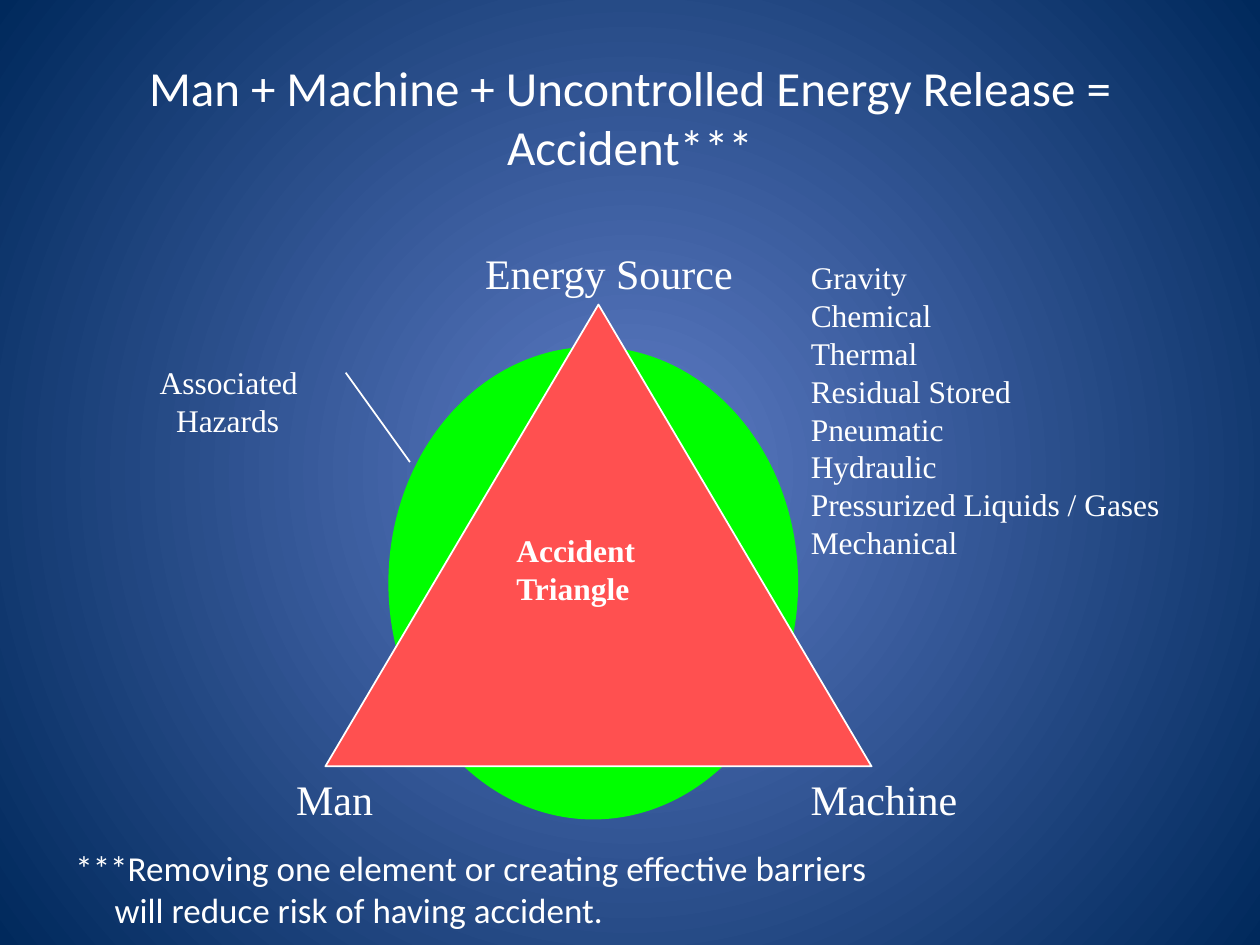
from lxml import etree
from pptx import Presentation
from pptx.dml.color import RGBColor
from pptx.enum.shapes import MSO_SHAPE
from pptx.enum.text import MSO_ANCHOR, MSO_AUTO_SIZE, PP_ALIGN
from pptx.oxml.ns import qn
from pptx.util import Cm, Pt

ELLIPSE = MSO_SHAPE.OVAL
TRIANGLE = MSO_SHAPE.ISOSCELES_TRIANGLE
CALLOUT = MSO_SHAPE.LINE_CALLOUT_1_NO_BORDER
LEFT, CENTER = PP_ALIGN.LEFT, PP_ALIGN.CENTER
TOP, MIDDLE = MSO_ANCHOR.TOP, MSO_ANCHOR.MIDDLE
NO_FIT, GROW = MSO_AUTO_SIZE.NONE, MSO_AUTO_SIZE.SHAPE_TO_FIT_TEXT

WHITE, GREEN, RED = "FFFFFF", "00FF00", "FF5050"
GLOW, NAVY = "5E7CC5", "00295C"
SERIF, SANS = "Times New Roman", "Calibri"
MACHINE_LEFT, CORNER_TOP = 16.09, 15.46
ENERGY_TYPES = [
    "Gravity", "Chemical", "Thermal", "Residual Stored", "Pneumatic",
    "Hydraulic", "Pressurized Liquids / Gases", "Mechanical",
]


def color(hex_text):
    return RGBColor.from_string(hex_text)


def place(shape, left, top, width, height):
    shape.left, shape.top = Cm(left), Cm(top)
    shape.width, shape.height = Cm(width), Cm(height)


def set_background(page, center, edge):
    """Fill the page with a circular gradient from center to edge."""
    fill = page.background.fill
    fill.gradient()
    for stop, position, shade in zip(fill.gradient_stops, (0, 1), (center, edge)):
        stop.position = position
        stop.color.rgb = color(shade)
    gradient = page.element.find(".//" + qn("a:gradFill"))
    gradient.remove(gradient.find(qn("a:lin")))
    circle = etree.SubElement(gradient, qn("a:path"), path="circle")
    etree.SubElement(circle, qn("a:fillToRect"), l="50000", t="50000", r="50000", b="50000")


def set_indent(para, margin, first):
    """Indent a paragraph without a bullet; first is relative to margin."""
    properties = para._p.get_or_add_pPr()
    properties.set("marL", str(Cm(margin)))
    properties.set("indent", str(Cm(first)))
    etree.SubElement(properties, qn("a:buNone"))


def write(shape, lines, size=18, font=SERIF, bold=False, align=LEFT, anchor=TOP,
          wrap=False, fit=GROW, indents=None):
    """Write one paragraph per line; indents holds (margin, first) pairs."""
    frame = shape.text_frame
    frame.text = "\n".join(lines)
    frame.word_wrap, frame.auto_size, frame.vertical_anchor = wrap, fit, anchor
    for para, indent in zip(frame.paragraphs, indents or [(0, 0)] * len(lines)):
        para.alignment = align
        para.space_before = Pt(0)
        set_indent(para, *indent)
        for span in para.runs:
            span.font.name, span.font.size, span.font.bold = font, Pt(size), bold
            span.font.color.rgb = color(WHITE)


def add_label(page, box, lines, **text_format):
    label = page.shapes.add_textbox(*map(Cm, box))
    write(label, lines, **text_format)


def add_figure(page, kind, box, fill=None, line=None):
    figure = page.shapes.add_shape(kind, *map(Cm, box))
    figure.shadow.inherit = False
    if fill:
        figure.fill.solid()
        figure.fill.fore_color.rgb = color(fill)
    else:
        figure.fill.background()
    if line:
        figure.line.color.rgb = color(line)
        figure.line.width = Pt(1)
    else:
        figure.line.fill.background()
    return figure


def add_callout(page, box, text, pointer):
    """Add a borderless callout; pointer is y, x of both line ends as shares of the box."""
    callout = add_figure(page, CALLOUT, box, line=WHITE)
    for index, share in enumerate(pointer):
        callout.adjustments[index] = share
    write(callout, [text], wrap=True, fit=NO_FIT, indents=[(0.33, -0.33)])


def main():
    deck = Presentation()
    deck.slide_width, deck.slide_height = Cm(25.4), Cm(19.05)
    page = deck.slides.add_slide(deck.slide_layouts[1])
    set_background(page, GLOW, NAVY)

    title, energy_list = page.placeholders
    place(title, 1.27, 0.76, 22.86, 3.18)
    write(title, ["Man + Machine + Uncontrolled Energy Release = Accident***"], size=28,
          font=SANS, align=CENTER, anchor=MIDDLE, wrap=True, fit=NO_FIT)
    place(energy_list, MACHINE_LEFT, 5.08, 7.77, 6.35)
    write(energy_list, ENERGY_TYPES)

    add_figure(page, ELLIPSE, (7.83, 6.99, 8.26, 9.53), fill=GREEN)
    add_figure(page, TRIANGLE, (6.56, 6.14, 11.01, 9.31), fill=RED, line=WHITE)
    add_label(page, (10.16, 10.59, 4.24, 2.62), ["Accident", "Triangle"], bold=True)

    for text, left, top, width in (
        ("Man", 5.72, CORNER_TOP, 2.1),
        ("Machine", MACHINE_LEFT, CORNER_TOP, 3.6),
        ("Energy Source", 9.53, 4.87, 5.55),
    ):
        add_label(page, (left, top, width, 1.27), [text], size=24)

    add_callout(page, (2.97, 7.19, 3.81, 1.7), "Associated Hazards",
                (0.19, 1.05, 1.25, 1.39))
    add_label(page, (0, 16.94, 22.86, 2.11),
              ["***Removing one element or creating effective barriers",
               "will reduce risk of having accident."],
              size=20, font=SANS, wrap=True, indents=[(2.06, -0.79), (2.06, 0)])

    deck.save("out.pptx")


if __name__ == "__main__":
    main()
